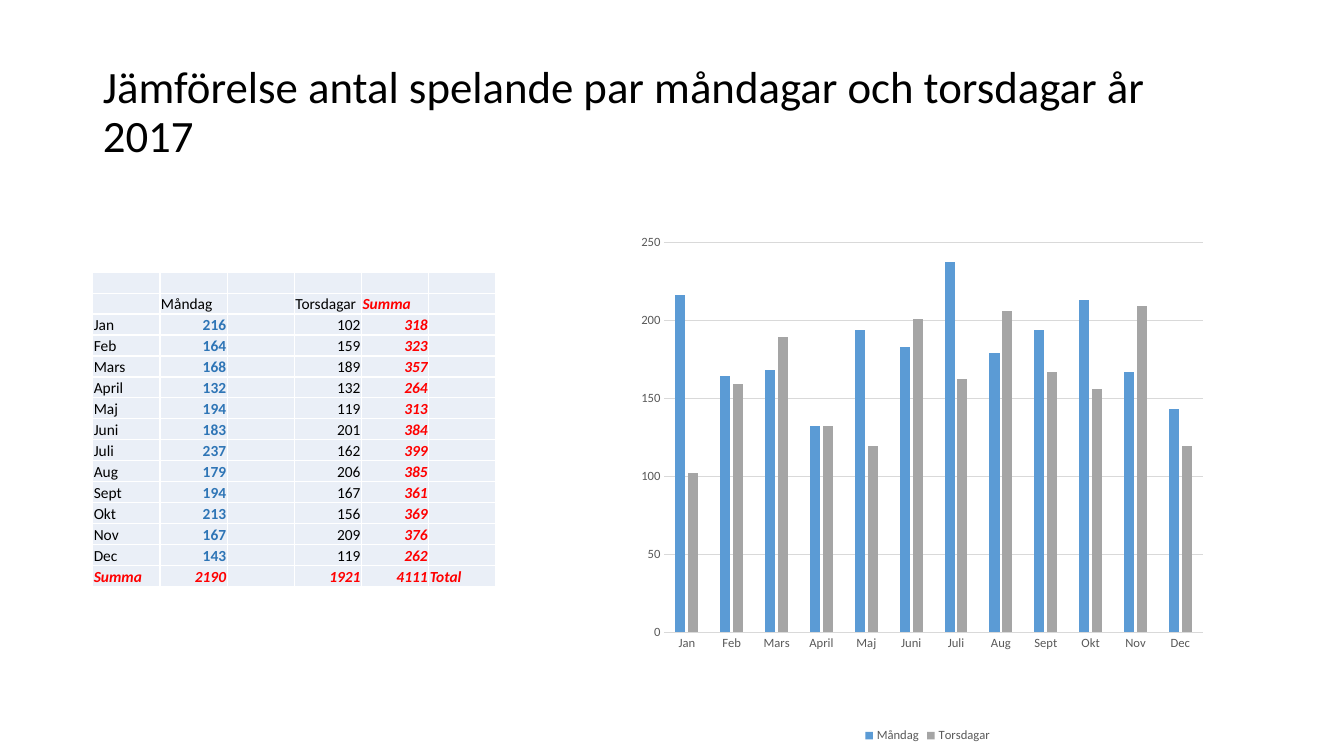
from lxml.etree import SubElement
from pptx import Presentation
from pptx.chart.data import CategoryChartData
from pptx.dml.color import RGBColor
from pptx.enum.chart import XL_CHART_TYPE as ChartType, XL_LEGEND_POSITION as LegendPosition
from pptx.enum.chart import XL_TICK_MARK as TickMark
from pptx.enum.text import MSO_ANCHOR as Anchor, MSO_AUTO_SIZE as AutoSize, PP_ALIGN as Align
from pptx.oxml import parse_xml
from pptx.oxml.ns import nsdecls, qn
from pptx.util import Inches, Pt

COLORS = {
    "black": "000000", "white": "FFFFFF", "cell": "EAEFF7", "monday_text": "2E75B6",
    "sum": "FF0000", "monday": "5B9BD5", "thursday": "A5A5A5",
    "axis_text": "595959", "grid": "D9D9D9",
}
FONT = "Calibri"
MONTHS = ["Jan", "Feb", "Mars", "April", "Maj", "Juni",
          "Juli", "Aug", "Sept", "Okt", "Nov", "Dec"]
MONDAYS = [216, 164, 168, 132, 194, 183, 237, 179, 194, 213, 167, 143]
THURSDAYS = [102, 159, 189, 132, 119, 201, 162, 206, 167, 156, 209, 119]
PLOT_AREA = {"x": 0.065, "y": 0.204, "w": 0.89, "h": 0.615}


def rgb(name):
    return RGBColor.from_string(COLORS[name])


def style_font(font, size, color, bold=False, italic=False):
    font.name, font.size = FONT, Pt(size)
    font.bold, font.italic = bold, italic
    font.color.rgb = rgb(color)


def place(shape, left, top, width, height):
    shape.left, shape.top = Inches(left), Inches(top)
    shape.width, shape.height = Inches(width), Inches(height)


def fill_title(title, wording):
    place(title, 0.92, 0.4, 11.5, 1.45)
    frame = title.text_frame
    frame.text = wording
    frame.word_wrap, frame.auto_size = True, AutoSize.NONE
    frame.vertical_anchor = Anchor.MIDDLE
    line = frame.paragraphs[0]
    line.alignment, line.line_spacing = Align.LEFT, 0.9
    style_font(line.runs[0].font, 32, "black")


def add_borders(cell):
    properties = cell._tc.get_or_add_tcPr()
    for side in ("lnL", "lnR", "lnT", "lnB"):
        border = SubElement(properties, qn(f"a:{side}"), w=str(Pt(1)))
        solid = SubElement(border, qn("a:solidFill"))
        SubElement(solid, qn("a:srgbClr"), val=COLORS["white"])


def fill_cell(cell, value, color, emphasis):
    """Numbers go right, words left; emphasis is a (bold, italic) pair."""
    add_borders(cell)
    cell.fill.solid()
    cell.fill.fore_color.rgb = rgb("cell")
    cell.margin_left = cell.margin_right = cell.margin_top = Inches(0.01)
    cell.margin_bottom = 0
    cell.vertical_anchor = Anchor.BOTTOM
    cell.text = str(value)
    line = cell.text_frame.paragraphs[0]
    if isinstance(value, int):
        line.alignment = Align.RIGHT
    for run in line.runs:
        style_font(run.font, 11, color, *emphasis)
    if not line.runs:
        line._p.get_or_add_endParaRPr().set("sz", "1100")


def cell_style(row, column, last_row):
    if row == last_row or column == 4:
        return "sum", (True, True)
    if column == 1 and row > 1:
        return "monday_text", (True, False)
    return "black", (False, False)


def add_pair_table(slide):
    months = [[month, monday, "", thursday, monday + thursday, ""]
              for month, monday, thursday in zip(MONTHS, MONDAYS, THURSDAYS)]
    totals = ["Summa", sum(MONDAYS), "", sum(THURSDAYS), sum(MONDAYS + THURSDAYS), "Total"]
    rows = [[""] * 6, ["", "Måndag", "", "Torsdagar", "Summa", ""], *months, totals]
    table = slide.shapes.add_table(len(rows), 6, Inches(0.92), Inches(2.7),
                                   Inches(4), Inches(3.12)).table
    table.first_row = table.horz_banding = False
    for r, values in enumerate(rows):
        for c, value in enumerate(values):
            fill_cell(table.cell(r, c), value, *cell_style(r, c, len(rows) - 1))


def set_plot_area(chart):
    """Fix the inner plot area as shares of the chart's size."""
    modes = "".join(f'<c:{side}Mode val="edge"/>' for side in "xy")
    shares = "".join(f'<c:{side} val="{share}"/>' for side, share in PLOT_AREA.items())
    layout = parse_xml(f'<c:layout {nsdecls("c")}><c:manualLayout><c:layoutTarget val="inner"/>'
                       f"{modes}{shares}</c:manualLayout></c:layout>")
    plot_area = chart._chartSpace.chart.plotArea
    for automatic in plot_area.findall(qn("c:layout")):
        plot_area.remove(automatic)
    plot_area.insert(0, layout)


def format_axes(chart):
    months, pairs = chart.category_axis, chart.value_axis
    for axis in (months, pairs):
        axis.major_tick_mark = axis.minor_tick_mark = TickMark.NONE
        style_font(axis.tick_labels.font, 9, "axis_text")
    pairs.minimum_scale, pairs.maximum_scale, pairs.major_unit = 0, 250, 50
    pairs.format.line.fill.background()
    for line in (months.format.line, pairs.major_gridlines.format.line):
        line.color.rgb = rgb("grid")
        line.width = Pt(0.75)


def add_pair_chart(slide):
    data = CategoryChartData()
    data.categories = MONTHS
    data.add_series("Måndag", MONDAYS)
    data.add_series("Torsdagar", THURSDAYS)
    chart = slide.shapes.add_chart(ChartType.COLUMN_CLUSTERED, Inches(6.2), Inches(1.12),
                                   Inches(6), Inches(6.29), data).chart
    style_font(chart.font, 10, "black")
    chart.has_title = False
    plot = chart.plots[0]
    plot.gap_width, plot.overlap, plot.vary_by_categories = 219, -27, False
    for series, color in zip(plot.series, ("monday", "thursday")):
        series.format.fill.solid()
        series.format.fill.fore_color.rgb = rgb(color)
    format_axes(chart)
    set_plot_area(chart)
    chart.has_legend = True
    chart.legend.position = LegendPosition.BOTTOM
    chart.legend.include_in_layout = False
    style_font(chart.legend.font, 9, "axis_text")


def main():
    deck = Presentation()
    deck.slide_width, deck.slide_height = Inches(13.33), Inches(7.5)
    slide = deck.slides.add_slide(deck.slide_layouts[5])
    fill_title(slide.shapes.title, "Jämförelse antal spelande par måndagar och torsdagar år 2017")
    add_pair_chart(slide)
    add_pair_table(slide)
    deck.save("out.pptx")


if __name__ == "__main__":
    main()
